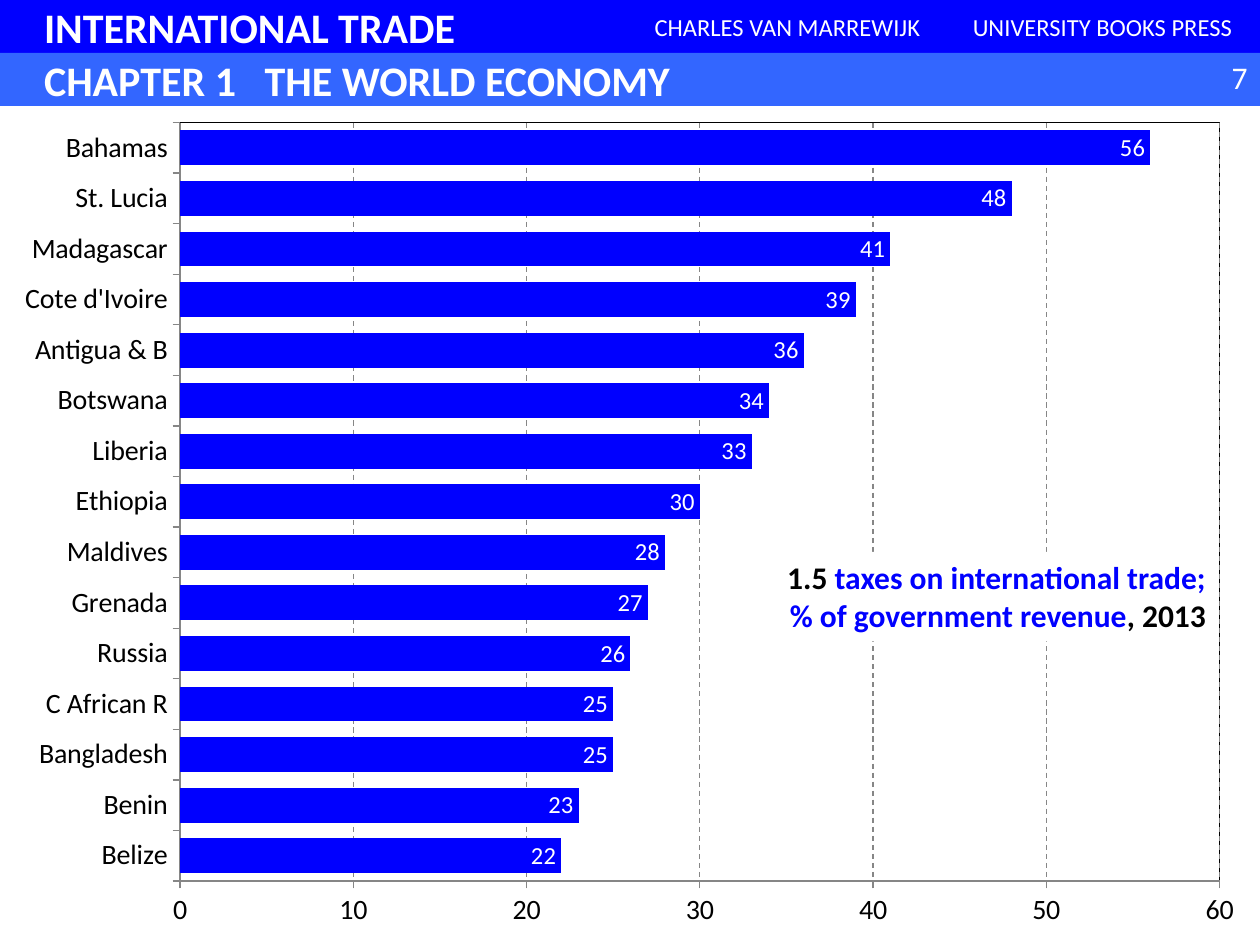
"""Build the slide on taxes on international trade as a share of government revenue."""
import pptx
import pptx.chart.data
import pptx.dml.color
import pptx.enum.chart
import pptx.enum.dml
import pptx.enum.shapes
import pptx.enum.text
import pptx.oxml
import pptx.oxml.ns
import pptx.util

W, H = 10, 7.5
BAND = 0.42
FONT = "Calibri"
BLUE, LIGHT, WHITE, BLACK, GRAY = "0000FF", "3366FF", "FFFFFF", "000000", "868686"
ALIGN = pptx.enum.text.PP_ALIGN
ANCHOR = pptx.enum.text.MSO_ANCHOR

# left, top, width, height, fill, inset, alignment, size, bold, text
HEADERS = [
    (0, 0, W, BAND, BLUE, 0.35, ALIGN.LEFT, 24, True, "INTERNATIONAL TRADE"),
    (W / 2, 0, W / 4, BAND, BLUE, 0.1, ALIGN.CENTER, 14, False, "CHARLES VAN MARREWIJK"),
    (W * 3 / 4, 0, W / 4, BAND, BLUE, 0.1, ALIGN.CENTER, 14, False, "UNIVERSITY BOOKS PRESS"),
    (0, BAND, W, BAND, LIGHT, 0.35, ALIGN.LEFT, 24, True, "CHAPTER 1\tTHE WORLD ECONOMY"),
]
PAGE = "7"
CAPTION = [
    ("1.5 ", BLACK),
    ("taxes on international trade; % of government revenue", BLUE),
    (", 2013", BLACK),
]
TAXES = [
    ("Bahamas", 56), ("St. Lucia", 48), ("Madagascar", 41), ("Cote d'Ivoire", 39),
    ("Antigua & B", 36), ("Botswana", 34), ("Liberia", 33), ("Ethiopia", 30),
    ("Maldives", 28), ("Grenada", 27), ("Russia", 26), ("C African R", 25),
    ("Bangladesh", 25), ("Benin", 23), ("Belize", 22),
]
PLOT = {"x": 0.143, "y": 0.02, "w": 0.825, "h": 0.904}


def rgb(color):
    return pptx.dml.color.RGBColor.from_string(color)


def box(*lengths):
    return [pptx.util.Inches(v) for v in lengths]


def style(font, size, color, bold=False):
    font.name, font.size, font.bold = FONT, pptx.util.Pt(size), bold
    font.color.rgb = rgb(color)


def add_rect(s, place, fill):
    sp = s.shapes.add_shape(pptx.enum.shapes.MSO_SHAPE.RECTANGLE, *box(*place))
    sp.shadow.inherit = False
    sp.fill.solid()
    sp.fill.fore_color.rgb = rgb(fill)
    sp.line.fill.background()
    return sp


def add_header(s, left, top, width, height, fill, inset, align, size, bold, text):
    tf = add_rect(s, (left, top, width, height), fill).text_frame
    tf.vertical_anchor = ANCHOR.MIDDLE
    tf.margin_left = pptx.util.Inches(inset)
    tf.text = text
    p = tf.paragraphs[0]
    p.alignment = align
    style(p.runs[0].font, size, WHITE, bold)
    if "\t" in text:
        tabs = pptx.oxml.parse_xml(
            f'<a:tabLst {pptx.oxml.ns.nsdecls("a")}>'
            f'<a:tab pos="{pptx.util.Inches(1.75)}" algn="l"/></a:tabLst>')
        p.runs[0].font
        p._p.get_or_add_pPr().append(tabs)


def add_page_number(s):
    sp = s.shapes.add_textbox(*box(W - 0.67, 0.41, 0.67, 0.4))
    tf = sp.text_frame
    tf.word_wrap = True
    tf.text = PAGE
    p = tf.paragraphs[0]
    p.alignment = ALIGN.RIGHT
    style(p.runs[0].font, 18, WHITE)


def set_plot_area(chart):
    area = chart.element.find(".//" + pptx.oxml.ns.qn("c:plotArea"))
    old = area.find(pptx.oxml.ns.qn("c:layout"))
    if old is not None:
        area.remove(old)
    modes = "".join(f'<c:{k}Mode val="edge"/>' for k in "xy")
    sizes = "".join(f'<c:{k} val="{v}"/>' for k, v in PLOT.items())
    area.insert(0, pptx.oxml.parse_xml(
        f'<c:layout {pptx.oxml.ns.nsdecls("c")}><c:manualLayout>'
        f'<c:layoutTarget val="inner"/>{modes}{sizes}</c:manualLayout></c:layout>'))
    area.append(pptx.oxml.parse_xml(
        f'<c:spPr {pptx.oxml.ns.nsdecls("c", "a")}><a:noFill/><a:ln w="9525"><a:solidFill>'
        f'<a:srgbClr val="{BLACK}"/></a:solidFill></a:ln></c:spPr>'))


def add_tax_chart(s):
    data = pptx.chart.data.CategoryChartData(number_format="#,##0")
    names, values = zip(*reversed(TAXES))
    data.categories = names
    data.add_series("Series 1", values)
    top = 2 * BAND
    chart = s.shapes.add_chart(
        pptx.enum.chart.XL_CHART_TYPE.BAR_CLUSTERED, *box(0, top, W, H - top), data).chart
    chart.has_legend = chart.has_title = False
    style(chart.font, 10, BLACK)
    for axis in (chart.category_axis, chart.value_axis):
        style(axis.tick_labels.font, 16, BLACK)
        axis.major_tick_mark = pptx.enum.chart.XL_TICK_MARK.OUTSIDE
        axis.format.line.color.rgb = rgb(GRAY)
    value = chart.value_axis
    value.minimum_scale, value.maximum_scale, value.major_unit = 0, 60, 10
    value.tick_labels.number_format = "#,##0"
    value.tick_labels.number_format_is_linked = False
    grid = value.major_gridlines.format.line
    grid.color.rgb = rgb(GRAY)
    grid.width = pptx.util.Pt(0.75)
    grid.dash_style = pptx.enum.dml.MSO_LINE.DASH

    plot = chart.plots[0]
    plot.gap_width = 45
    plot.vary_by_categories = False
    fill = plot.series[0].format.fill
    fill.solid()
    fill.fore_color.rgb = rgb(BLUE)
    plot.has_data_labels = True
    labels = plot.data_labels
    labels.show_value = True
    labels.position = pptx.enum.chart.XL_LABEL_POSITION.INSIDE_END
    labels.number_format, labels.number_format_is_linked = "#,##0", False
    style(labels.font, 14, WHITE)
    set_plot_area(chart)


def add_caption(s):
    tf = add_rect(s, (6, 4.38, 3.67, 0.71), WHITE).text_frame
    tf.word_wrap = True
    tf.vertical_anchor = ANCHOR.TOP
    p = tf.paragraphs[0]
    p.alignment = ALIGN.RIGHT
    p.space_after = pptx.util.Pt(6)
    for text, color in CAPTION:
        r = p.add_run()
        r.text = text
        style(r.font, 18, color, True)


def main():
    prs = pptx.Presentation()
    prs.slide_width, prs.slide_height = box(W, H)
    s = prs.slides.add_slide(prs.slide_layouts[6])
    for header in HEADERS:
        add_header(s, *header)
    add_page_number(s)
    add_tax_chart(s)
    add_caption(s)
    prs.save("out.pptx")


if __name__ == "__main__":
    main()
